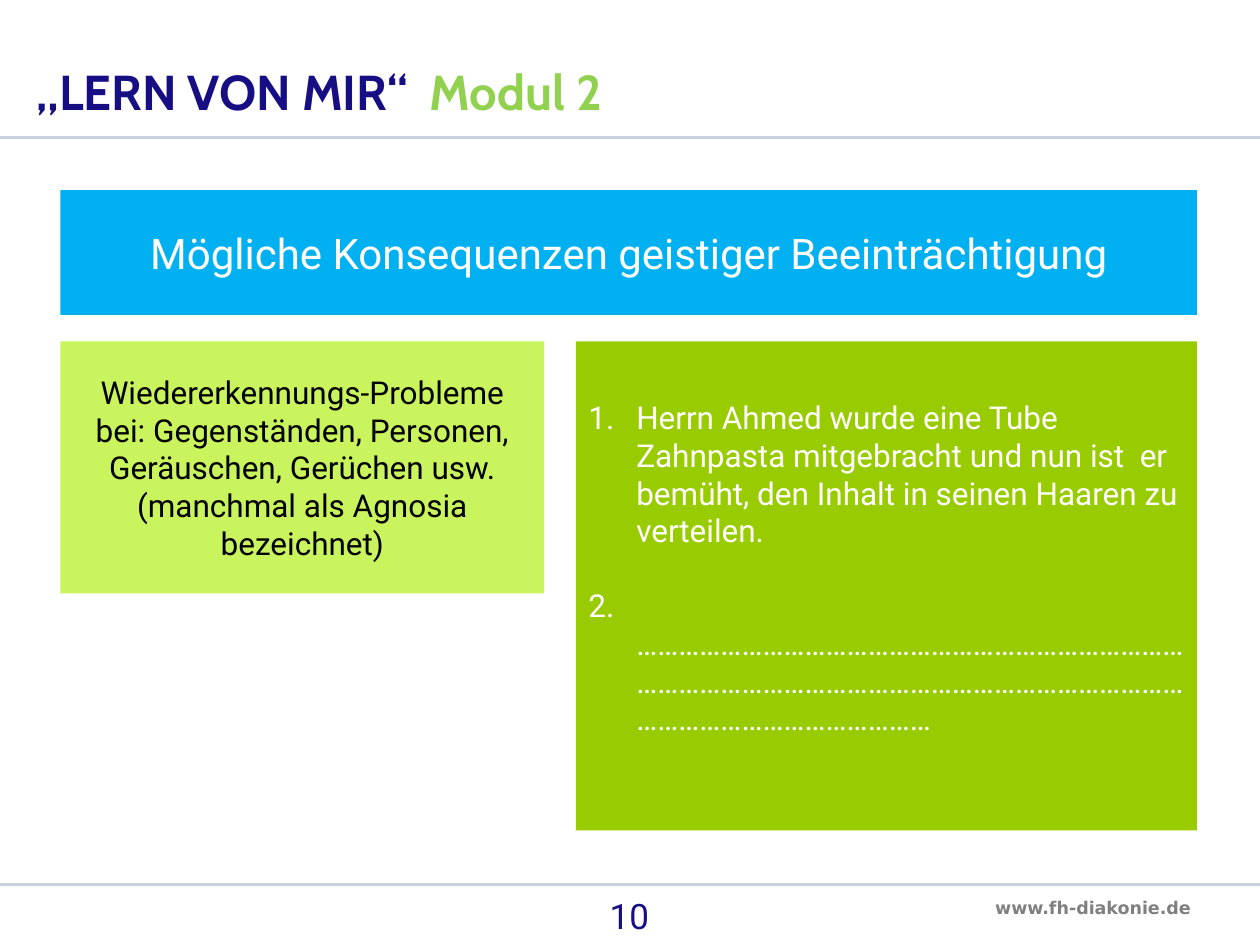
from lxml import etree
from pptx import Presentation
from pptx.dml.color import RGBColor
from pptx.enum.shapes import MSO_CONNECTOR, MSO_SHAPE
from pptx.enum.text import MSO_ANCHOR, MSO_AUTO_SIZE, PP_ALIGN
from pptx.oxml.ns import qn
from pptx.util import Inches, Pt

LEFT, CENTER = PP_ALIGN.LEFT, PP_ALIGN.CENTER
TOP, MIDDLE, BOTTOM = MSO_ANCHOR.TOP, MSO_ANCHOR.MIDDLE, MSO_ANCHOR.BOTTOM
NO_FIT = MSO_AUTO_SIZE.NONE
RECT, STRAIGHT = MSO_SHAPE.RECTANGLE, MSO_CONNECTOR.STRAIGHT

COLORS = {
    "navy": "170E83", "light_green": "92D050", "blue": "00B0F0",
    "lime": "C9F45E", "green": "99CC00", "white": "FFFFFF",
    "black": "000000", "gray": "808080", "rule": "C8D2DC",
}

TITLE = [("„LERN VON MIR“  ", "navy"), ("Modul 2", "light_green")]
HEADING = ["Mögliche Konsequenzen geistiger Beeinträchtigung"]
PROBLEMS = [
    "Wiedererkennungs-Probleme bei: Gegenständen, Personen, Geräuschen, Gerüchen usw.",
    "(manchmal als Agnosia bezeichnet)",
]
EXAMPLES = [
    "Herrn Ahmed wurde eine Tube Zahnpasta mitgebracht und nun ist  er bemüht, "
    "den Inhalt in seinen Haaren zu verteilen.",
    " " + "…" * 66,
]
PAGE = ["10"]
SITE = ["www.fh-diakonie.de"]

SLIDE_W, SLIDE_H = 10, 7.5
EDGE_L, EDGE_R, ROW_TOP = 0.48, 9.5, 2.71
EXAMPLES_LEFT, INDENT, LINE_GAP = 4.57, 0.38, 21
RULES = [1.09, 7.02]
BOXES = [
    (HEADING, (EDGE_L, 1.51, EDGE_R - EDGE_L, 0.99), "blue", "white", 24),
    (PROBLEMS, (EDGE_L, ROW_TOP, 3.84, 2), "lime", "black", 18),
]
LABELS = [
    (PAGE, (3.83, 7.05, 2.33, 0.45), CENTER,
     {"size": Pt(20), "name": "Roboto", "bold": False}, "navy"),
    (SITE, (7.8, 7.07, 1.78, 0.27), LEFT,
     {"size": Pt(10), "name": "DejaVu Sans", "bold": True}, "gray"),
]


def rgb(name):
    return RGBColor.from_string(COLORS[name])


def place(sp, box):
    for key, value in zip(("left", "top", "width", "height"), box):
        setattr(sp, key, Inches(value))


def format_frame(tf, anchor):
    frame = {"word_wrap": True, "auto_size": NO_FIT, "vertical_anchor": anchor}
    for key, value in frame.items():
        setattr(tf, key, value)


def add_run(p, text, color, font):
    r = p.add_run()
    r.text = text
    for key, value in font.items():
        setattr(r.font, key, value)
    r.font.color.rgb = rgb(color)


def write(sp, lines, anchor, align, color, font):
    tf = sp.text_frame
    format_frame(tf, anchor)
    for i, line in enumerate(lines):
        p = tf.add_paragraph() if i else tf.paragraphs[0]
        p.alignment = align
        add_run(p, line, color, font)


def paint(sp, color):
    sp.fill.solid()
    sp.fill.fore_color.rgb = rgb(color)
    sp.line.fill.background()


def number(p):
    pPr = p._p.get_or_add_pPr()
    pPr.set("marL", str(Inches(INDENT)))
    pPr.set("indent", str(-Inches(INDENT)))
    etree.SubElement(pPr, qn("a:buFont"), typeface="+mj-lt")
    etree.SubElement(pPr, qn("a:buAutoNum"), type="arabicPeriod")


def add_rule(s, y):
    line = s.shapes.add_connector(
        STRAIGHT, 0, Inches(y), Inches(SLIDE_W), Inches(y))
    line.line.color.rgb = rgb("rule")
    line.line.width = Pt(1.5)
    etree.SubElement(line._element.spPr, qn("a:effectLst"))


def add_title(s):
    sp = s.shapes.title
    place(sp, (0.19, 0.43, 6.67, 0.58))
    format_frame(sp.text_frame, BOTTOM)
    p = sp.text_frame.paragraphs[0]
    p.alignment, p.line_spacing = LEFT, 0.9
    for text, color in TITLE:
        add_run(p, text, color, {"size": Pt(28), "name": "Cabin", "bold": True})


def add_examples(s):
    sp = s.placeholders[1]
    place(sp, (EXAMPLES_LEFT, ROW_TOP, EDGE_R - EXAMPLES_LEFT, 3.88))
    paint(sp, "green")
    write(sp, EXAMPLES, MIDDLE, LEFT, "white", {"size": Pt(18), "name": "Roboto"})
    sp.text_frame.margin_bottom = Inches(0.34)
    for i, p in enumerate(sp.text_frame.paragraphs):
        number(p)
        p.space_before = Pt(LINE_GAP if i else 0)


def main():
    prs = Presentation()
    prs.slide_width, prs.slide_height = Inches(SLIDE_W), Inches(SLIDE_H)
    s = prs.slides.add_slide(prs.slide_layouts[1])
    add_title(s)
    add_examples(s)
    for y in RULES:
        add_rule(s, y)
    for lines, box, fill, color, size in BOXES:
        sp = s.shapes.add_shape(RECT, *map(Inches, box))
        sp.shadow.inherit = False
        paint(sp, fill)
        write(sp, lines, MIDDLE, CENTER, color, {"size": Pt(size), "name": "Roboto"})
    for lines, box, align, font, color in LABELS:
        sp = s.shapes.add_textbox(*map(Inches, box))
        write(sp, lines, TOP, align, color, font)
    prs.save("out.pptx")


if __name__ == "__main__":
    main()
